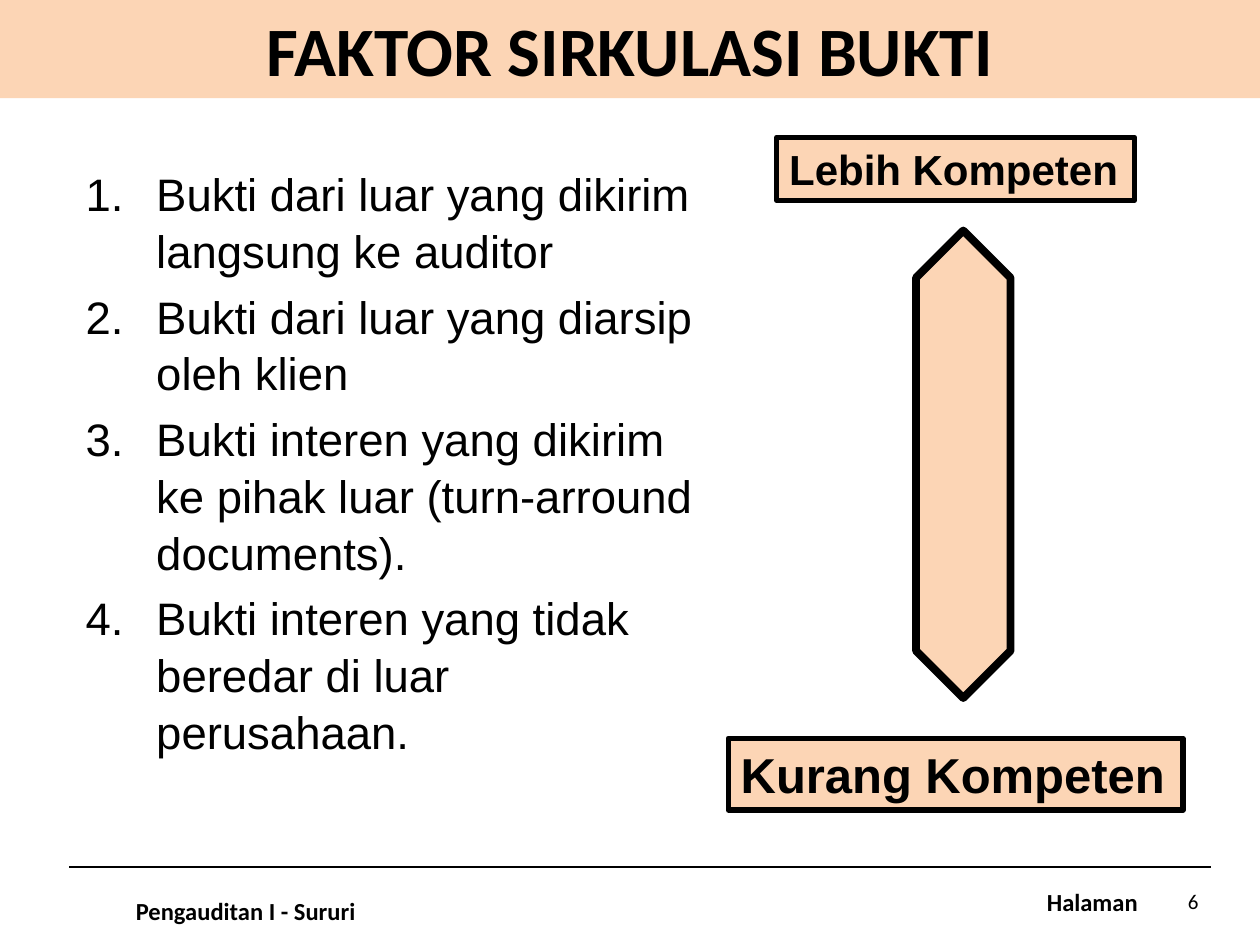
from lxml import etree
from pptx import Presentation
from pptx import util as u
from pptx.dml.color import RGBColor
from pptx.enum import shapes, text
from pptx.oxml.ns import qn

COLORS = {"ink": "000000", "peach": "FCD5B5"}
WIDTH, HEIGHT = 10, 7.5
EVIDENCE = [
    "Bukti dari luar yang dikirim langsung ke auditor",
    "Bukti dari luar yang diarsip oleh klien",
    "Bukti interen yang dikirim ke pihak luar (turn-arround documents).",
    "Bukti interen yang tidak beredar di luar perusahaan.",
]


def color(name):
    return RGBColor.from_string(COLORS[name])


def inches(box):
    return [u.Inches(length) for length in box]


def place(shape, box):
    shape.left, shape.top, shape.width, shape.height = inches(box)


def fill_peach(shape):
    shape.fill.solid()
    shape.fill.fore_color.rgb = color("peach")


def add_run(paragraph, words, size, font="Calibri", bold=False):
    run = paragraph.add_run()
    run.text = words
    run.font.size, run.font.name, run.font.bold = u.Pt(size), font, bold
    run.font.color.rgb = color("ink")


def add_title(slide, box):
    title = slide.shapes.title
    place(title, box)
    fill_peach(title)
    frame = title.text_frame
    frame.auto_size = text.MSO_AUTO_SIZE.NONE
    frame.vertical_anchor = text.MSO_ANCHOR.MIDDLE
    paragraph = frame.paragraphs[0]
    paragraph.alignment = text.PP_ALIGN.CENTER
    add_run(paragraph, "FAKTOR SIRKULASI BUKTI", 39.6, bold=True)


def add_evidence_list(slide, box):
    body = slide.placeholders[1]
    place(body, box)
    frame = body.text_frame
    frame.auto_size = text.MSO_AUTO_SIZE.NONE
    frame.vertical_anchor = text.MSO_ANCHOR.TOP
    indent = u.Inches(0.56)
    for index, item in enumerate(EVIDENCE):
        paragraph = frame.add_paragraph() if index else frame.paragraphs[0]
        properties = paragraph._p.get_or_add_pPr()
        properties.set("marL", str(indent))
        properties.set("indent", str(-indent))
        etree.SubElement(properties, qn("a:buFont"), typeface="+mj-lt")
        etree.SubElement(properties, qn("a:buAutoNum"), type="arabicPeriod")
        paragraph.line_spacing = 1.04
        paragraph.space_before = u.Pt(5.2 if index else 0)
        add_run(paragraph, item, 26, "Arial")


def add_outlined(slide, kind, box, line_width):
    shape = slide.shapes.add_shape(kind, *inches(box))
    shape.shadow.inherit = False
    fill_peach(shape)
    shape.line.color.rgb = color("ink")
    shape.line.width = u.Pt(line_width)
    return shape


def add_competence_scale(slide, box):
    """Two labels centred at the ends of a double arrow."""
    left, top, width, height = box
    centre = left + width / 2
    labels = [("Lebih Kompeten", 24, 2.84, 0.5, top),
              ("Kurang Kompeten", 28, 3.61, 0.57, top + height - 0.57)]
    for words, size, label_width, label_height, label_top in labels:
        label = add_outlined(slide, shapes.MSO_SHAPE.RECTANGLE,
                             (centre - label_width / 2, label_top, label_width, label_height), 3)
        frame = label.text_frame
        frame.word_wrap = False
        frame.vertical_anchor = text.MSO_ANCHOR.TOP
        paragraph = frame.paragraphs[0]
        paragraph.alignment = text.PP_ALIGN.LEFT
        add_run(paragraph, words, size, "Arial", True)
    arrow = add_outlined(slide, shapes.MSO_SHAPE.UP_DOWN_ARROW,
                         (centre + 0.06 - 0.375, top + 0.74, 0.75, 3.71), 4.5)
    arrow.adjustments[0], arrow.adjustments[1] = 0.5, 1.133


def add_footer(slide, box):
    left, top, width, height = box
    rule = slide.shapes.add_connector(shapes.MSO_CONNECTOR.STRAIGHT,
                                      *inches((left, top, left + width, top)))
    rule.line.color.rgb = color("ink")
    rule.line.width = u.Pt(1.5)
    etree.SubElement(rule._element.spPr, qn("a:effectLst"))
    right = left + width
    parts = [("Pengauditan I - Sururi", (left + 0.43, top + 0.18, 2, 0.34), 14, True),
             ("Halaman", (right - 1.4, top + 0.11, 0.93, 0.34), 14, True),
             ("6", (right - 0.47, top + 0.07, 0.47, 0.4), 12, False)]
    for words, part_box, size, bold in parts:
        frame = slide.shapes.add_textbox(*inches(part_box)).text_frame
        paragraph = frame.paragraphs[0]
        frame.word_wrap = not bold
        if not bold:
            frame.vertical_anchor = text.MSO_ANCHOR.MIDDLE
            paragraph.alignment = text.PP_ALIGN.RIGHT
        add_run(paragraph, words, size, bold=bold)


def main():
    presentation = Presentation()
    presentation.slide_width, presentation.slide_height = inches((WIDTH, HEIGHT))
    slide = presentation.slides.add_slide(presentation.slide_layouts[1])
    add_title(slide, (0, 0, WIDTH, 0.78))
    add_evidence_list(slide, (0.58, 1.25, 5.12, 4.77))
    add_competence_scale(slide, (5.78, 1.09, 3.61, 5.34))
    add_footer(slide, (0.55, 6.88, 9.06, HEIGHT - 6.88))
    presentation.save("out.pptx")


if __name__ == "__main__":
    main()
